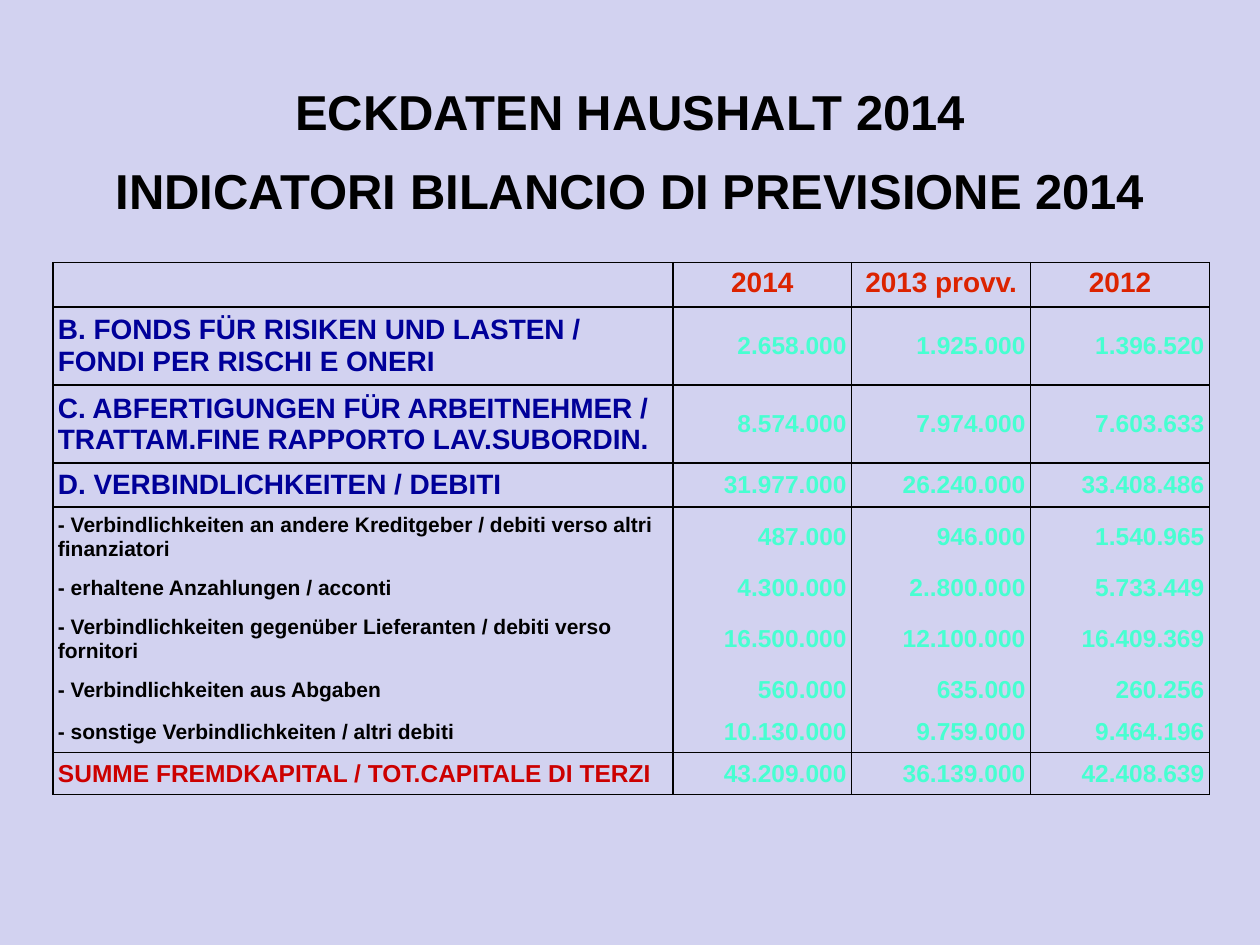
from lxml.etree import SubElement
from pptx import Presentation
from pptx.dml.color import RGBColor
from pptx.enum.text import MSO_ANCHOR, PP_ALIGN
from pptx.oxml.ns import qn
from pptx.util import Inches, Pt

LAVENDER = RGBColor(0xD2, 0xD2, 0xF0)
BLACK = RGBColor(0x00, 0x00, 0x00)
NAVY = RGBColor(0x00, 0x00, 0x99)
MINT = RGBColor(0x47, 0xFF, 0xD1)
ORANGE_RED = RGBColor(0xDC, 0x23, 0x00)
DARK_RED = RGBColor(0xCC, 0x00, 0x00)

NO_GRID_STYLE = "{2D5ABB26-0587-4C30-8999-92F81FD0307C}"

TITLE = ["ECKDATEN HAUSHALT 2014", "INDICATORI BILANCIO DI PREVISIONE 2014"]
YEARS = ["2014", "2013 provv.", "2012"]

# Kind of row: label size, label colour, bordered sides
ROW_KINDS = {
    "section": (16, NAVY, "LRTB"),
    "group": (16, NAVY, "LRT"),
    "item": (12, BLACK, "LR"),
    "last item": (12, BLACK, "LRB"),
    "total": (14, DARK_RED, "LRTB"),
}

# Kind, row height, label, amounts by year
BALANCE = [
    ("section", 0.62, "B. FONDS FÜR RISIKEN UND LASTEN / FONDI PER RISCHI E ONERI",
     ["2.658.000", "1.925.000", "1.396.520"]),
    ("section", 0.62,
     "C. ABFERTIGUNGEN FÜR ARBEITNEHMER / TRATTAM.FINE RAPPORTO LAV.SUBORDIN.",
     ["8.574.000", "7.974.000", "7.603.633"]),
    ("group", 0.35, "D. VERBINDLICHKEITEN / DEBITI",
     ["31.977.000", "26.240.000", "33.408.486"]),
    ("item", 0.48,
     "- Verbindlichkeiten an andere Kreditgeber / debiti verso altri finanziatori",
     ["487.000", "946.000", "1.540.965"]),
    ("item", 0.33, "- erhaltene Anzahlungen / acconti",
     ["4.300.000", "2..800.000", "5.733.449"]),
    ("item", 0.48, "- Verbindlichkeiten gegenüber Lieferanten / debiti verso fornitori",
     ["16.500.000", "12.100.000", "16.409.369"]),
    ("item", 0.33, "- Verbindlichkeiten aus Abgaben",
     ["560.000", "635.000", "260.256"]),
    ("last item", 0.33, "- sonstige Verbindlichkeiten / altri debiti",
     ["10.130.000", "9.759.000", "9.464.196"]),
    ("total", 0.33, "SUMME FREMDKAPITAL / TOT.CAPITALE DI TERZI",
     ["43.209.000", "36.139.000", "42.408.639"]),
]


class SlideBuilder:
    """Holds the style and the current slide; places parts by slide shares."""

    font = "Arial"
    cell_margin = Inches(0.04)

    def __init__(self, deck):
        self.width, self.height = deck.slide_width, deck.slide_height
        self.slide = deck.slides.add_slide(deck.slide_layouts[6])
        self.slide.background.fill.solid()
        self.slide.background.fill.fore_color.rgb = LAVENDER

    def box(self, left, top, width, height):
        return (int(self.width * left), int(self.height * top),
                int(self.width * width), int(self.height * height))

    def add_text(self, paragraph, text, size, color, align):
        paragraph.alignment = align
        run = paragraph.add_run()
        run.text = text
        run.font.name, run.font.size, run.font.bold = self.font, Pt(size), True
        run.font.color.rgb = color

    def title(self, lines, share, size, gap):
        frame = self.slide.shapes.add_textbox(*self.box(*share)).text_frame
        frame.word_wrap = False
        for number, line in enumerate(lines):
            paragraph = frame.add_paragraph() if number else frame.paragraphs[0]
            if number:
                paragraph.space_before = Pt(gap)
            self.add_text(paragraph, line, size, BLACK, PP_ALIGN.CENTER)

    def table(self, share, column_widths, row_heights):
        frame = self.slide.shapes.add_table(
            len(row_heights), len(column_widths), *self.box(*share))
        table = frame.table
        table.first_row = table.horz_banding = False
        table._tbl.tblPr.find(qn("a:tableStyleId")).text = NO_GRID_STYLE
        for column, width in zip(table.columns, column_widths):
            column.width = Inches(width)
        for row, height in zip(table.rows, row_heights):
            row.height = Inches(height)
        return table

    def cell(self, cell, text, size, color, align, sides="LRTB"):
        cell.vertical_anchor = MSO_ANCHOR.MIDDLE
        cell.margin_left = cell.margin_right = self.cell_margin
        cell.margin_top = cell.margin_bottom = self.cell_margin
        self.borders(cell, sides)
        cell.fill.background()
        paragraph = cell.text_frame.paragraphs[0]
        if text:
            self.add_text(paragraph, text, size, color, align)
        else:
            SubElement(paragraph._p, qn("a:endParaRPr"), sz=str(size * 100))
        return paragraph

    def borders(self, cell, sides):
        properties = cell._tc.get_or_add_tcPr()
        for side in sides:
            line = SubElement(properties, qn(f"a:ln{side}"), w=str(Pt(1)))
            fill = SubElement(line, qn("a:solidFill"))
            SubElement(fill, qn("a:srgbClr"), val=str(BLACK))


def main():
    deck = Presentation()
    deck.slide_width, deck.slide_height = Inches(10), Inches(7.5)
    page = SlideBuilder(deck)

    # Bilingual title
    page.title(TITLE, (0.08, 0.08, 0.84, 0.16), size=28, gap=11.5)

    # Balance table
    heights = [0.35] + [height for _, height, _, _ in BALANCE]
    balance = page.table((0.042, 0.278, 0.917, 0.56), [4.92] + [1.42] * 3, heights)

    # Header row
    for column, year in enumerate([""] + YEARS):
        heading = page.cell(balance.cell(0, column), year, 16, ORANGE_RED,
                            PP_ALIGN.CENTER)
        if year:
            heading.line_spacing, heading.space_before = 0.81, Pt(8)

    # Labels and amounts
    for row, (kind, _, label, amounts) in enumerate(BALANCE, start=1):
        size, color, sides = ROW_KINDS[kind]
        page.cell(balance.cell(row, 0), label, size, color, PP_ALIGN.LEFT, sides)
        for column, amount in enumerate(amounts, start=1):
            page.cell(balance.cell(row, column), amount, 14, MINT,
                      PP_ALIGN.RIGHT, sides)

    deck.save("out.pptx")


if __name__ == "__main__":
    main()
